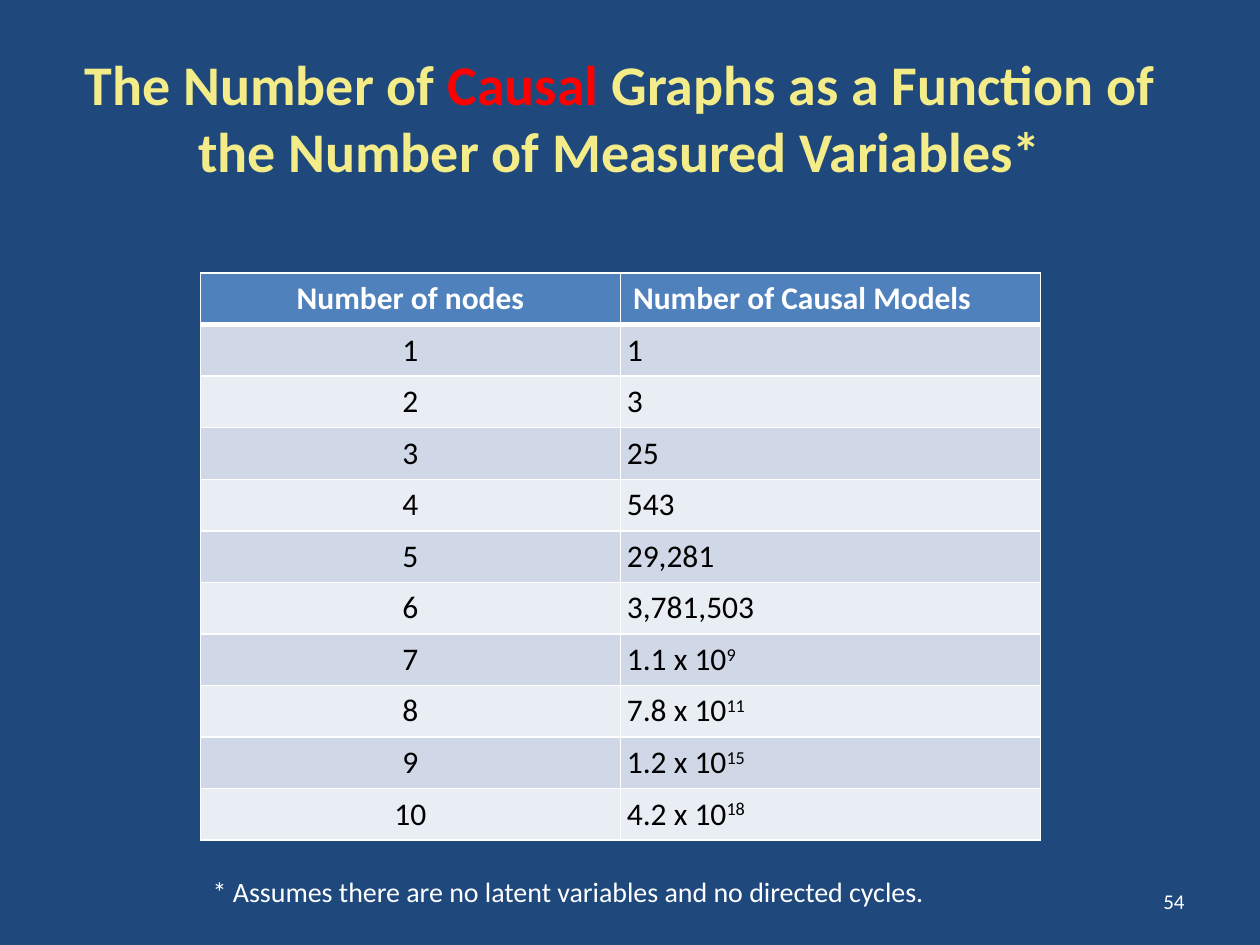
import pptx
import pptx.util
import pptx.dml.color
import pptx.enum.text
import pptx.oxml.ns
import lxml.etree

WIDTH, HEIGHT = pptx.util.Inches(10), pptx.util.Inches(7.5)
COLOURS = {
    "background": "1F497D", "title": "F4EC88", "accent": "FF0000",
    "header": "4F81BD", "odd": "D0D8E8", "even": "E9EDF4",
    "light": "FFFFFF", "dark": "000000",
}
ALIGN = pptx.enum.text.PP_ALIGN
MIDDLE = pptx.enum.text.MSO_ANCHOR.MIDDLE
TITLE = [("The Number of ", "title"), ("Causal", "accent"),
         (" Graphs as a Function of the Number of Measured Variables*", "title")]
HEADINGS = ("Number of nodes", "Number of Causal Models")
MODEL_COUNTS = ["1", "3", "25", "543", "29,281", "3,781,503",
                "1.1 x 10^9", "7.8 x 10^11", "1.2 x 10^15", "4.2 x 10^18"]


def colour(key):
    return pptx.dml.color.RGBColor.from_string(COLOURS[key])


def share(left, top, width, height):
    return (int(left * WIDTH), int(top * HEIGHT),
            int(width * WIDTH), int(height * HEIGHT))


def apply(target, formats):
    for attribute, value in formats.items():
        setattr(target, attribute, value)


def add_run(paragraph, words, size, tint, bold=False):
    run = paragraph.add_run()
    run.text = words
    apply(run.font, {"name": "Calibri", "size": pptx.util.Pt(size), "bold": bold})
    run.font.color.rgb = colour(tint)
    return run


def add_title(slide, box):
    title = slide.shapes.title
    apply(title, dict(zip(("left", "top", "width", "height"), box)))
    apply(title.text_frame, {"word_wrap": True, "vertical_anchor": MIDDLE})
    paragraph = title.text_frame.paragraphs[0]
    paragraph.alignment = ALIGN.CENTER
    for words, tint in TITLE:
        add_run(paragraph, words, 32, tint, bold=True)


def add_borders(cell, top, bottom):
    properties = cell._tc.get_or_add_tcPr()
    qn = pptx.oxml.ns.qn
    for side, points in (("L", 1), ("R", 1), ("T", top), ("B", bottom)):
        line = lxml.etree.SubElement(properties, qn(f"a:ln{side}"),
                                     w=str(pptx.util.Pt(points)))
        fill = lxml.etree.SubElement(line, qn("a:solidFill"))
        lxml.etree.SubElement(fill, qn("a:srgbClr"), val=COLOURS["light"])


def fill_cell(cell, words, row, column):
    heading = row == 0
    add_borders(cell, 3 if row == 1 else 1, 3 if heading else 1)
    cell.fill.solid()
    cell.fill.fore_color.rgb = colour(
        "header" if heading else "odd" if row % 2 else "even")
    if not heading:
        margin = pptx.util.Inches(0.05)
        apply(cell, {"vertical_anchor": MIDDLE, "margin_left": margin,
                     "margin_right": margin, "margin_top": margin,
                     "margin_bottom": margin})
    paragraph = cell.text_frame.paragraphs[0]
    paragraph.alignment = ALIGN.LEFT if column else ALIGN.CENTER
    tint = "light" if heading else "dark"
    base, _, exponent = words.partition("^")
    add_run(paragraph, base, 18, tint, heading)
    if exponent:
        power = add_run(paragraph, exponent, 18, tint)
        power.font._element.set("baseline", "30000")


def add_counts_table(slide, box):
    rows = [HEADINGS] + [(str(nodes), count)
                         for nodes, count in enumerate(MODEL_COUNTS, 1)]
    table = slide.shapes.add_table(len(rows), len(HEADINGS), *box).table
    for row, entries in enumerate(rows):
        table.rows[row].height = box[3] // len(rows)
        for column, words in enumerate(entries):
            fill_cell(table.cell(row, column), words, row, column)


def add_label(slide, box, words, size, **formats):
    frame = slide.shapes.add_textbox(*box).text_frame
    apply(frame, {"word_wrap": True, **formats})
    add_run(frame.paragraphs[0], words, size, "light")
    return frame.paragraphs[0]


def add_footer(slide, note_box, number_box):
    add_label(slide, note_box,
              "* Assumes there are no latent variables and no directed cycles.", 16)
    number = add_label(slide, number_box, "54", 12, vertical_anchor=MIDDLE)
    number.alignment = ALIGN.RIGHT


def main():
    deck = pptx.Presentation()
    apply(deck, {"slide_width": WIDTH, "slide_height": HEIGHT})
    slide = deck.slides.add_slide(deck.slide_layouts[5])
    slide.background.fill.solid()
    slide.background.fill.fore_color.rgb = colour("background")
    add_title(slide, share(0.05, 0.023, 0.884, 0.2))
    add_counts_table(slide, share(0.159, 0.289, 0.667, 0.6))
    add_footer(slide, share(0.159, 0.919, 0.7, 0.05),
               share(0.717, 0.927, 0.233, 0.053))
    deck.save("out.pptx")


if __name__ == "__main__":
    main()
